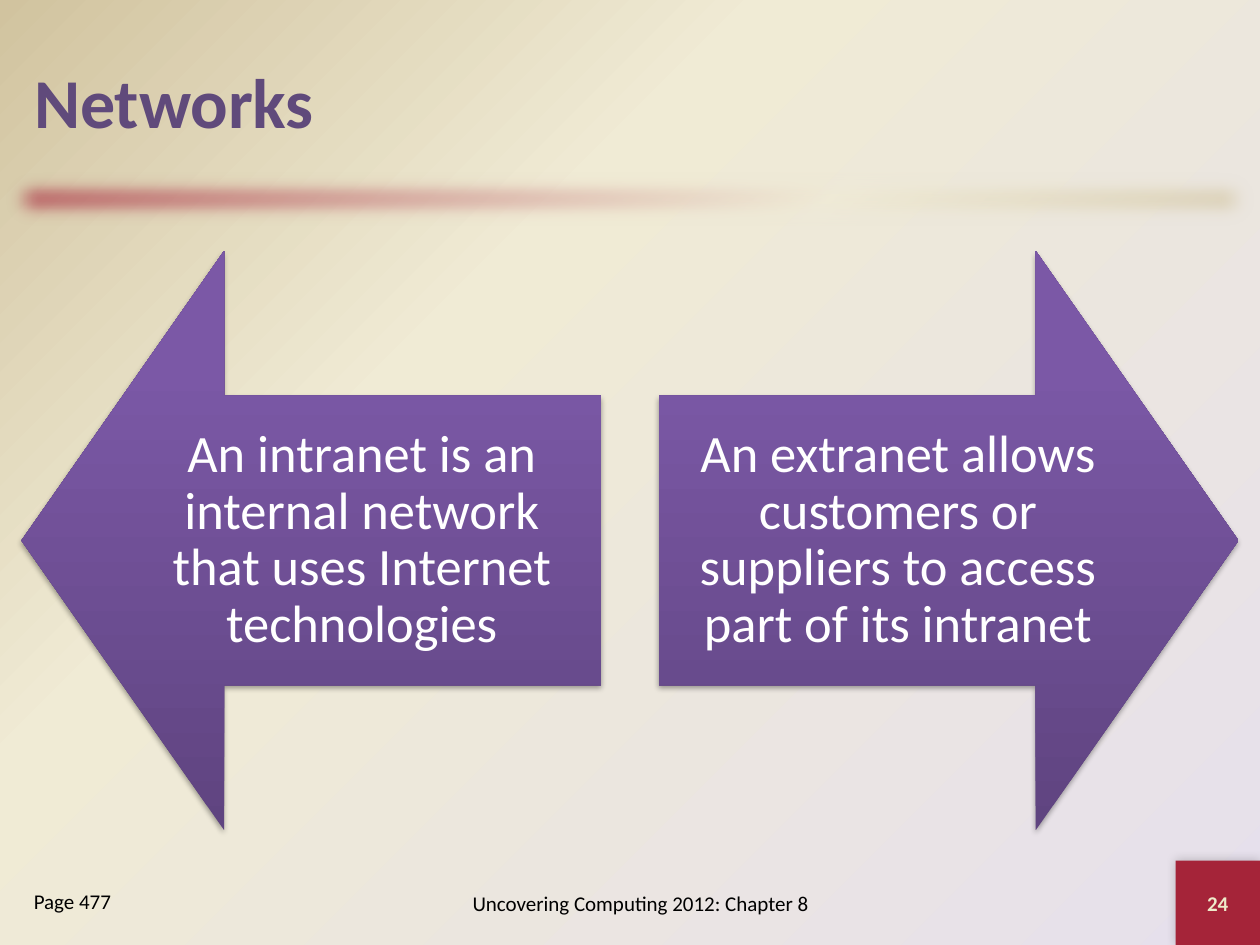
from lxml import etree
from pptx import Presentation
from pptx.dml.color import RGBColor
from pptx.enum.shapes import MSO_SHAPE
from pptx.enum.text import MSO_ANCHOR, PP_ALIGN
from pptx.oxml.ns import qn
from pptx.util import Inches, Pt

LEFT, CENTER = PP_ALIGN.LEFT, PP_ALIGN.CENTER
TOP, MIDDLE = MSO_ANCHOR.TOP, MSO_ANCHOR.MIDDLE
RECT = MSO_SHAPE.RECTANGLE
ARROWS = MSO_SHAPE.LEFT_ARROW, MSO_SHAPE.RIGHT_ARROW

COLORS = {
    "red": "A52439", "cream": "F0EBD5", "sand": "D1C39F", "mist": "E6E0EC",
    "title": "604A7B", "deep": "5F4480", "mid": "7B58A6", "light": "7C57A8",
    "white": "FFFFFF", "black": "000000", "number": "EEEBCA",
}


def add(parent, tag, **attrs):
    node = etree.SubElement(parent, qn("a:" + tag))
    for key, value in attrs.items():
        node.set(key, str(value))
    return node


class Deck:
    font = "Calibri"

    def __init__(self, width, height):
        self.prs = Presentation()
        self.prs.slide_width = Inches(width)
        self.prs.slide_height = Inches(height)
        self.slide = self.prs.slides.add_slide(self.prs.slide_layouts[5])

    def blend(self, fill, root, stops, angle=None):
        fill.gradient()
        grad = next(root.iter(qn("a:gradFill")))
        for child in list(grad):
            grad.remove(child)
        grad.set("rotWithShape", "1")
        row = add(grad, "gsLst")
        for pos, name in stops:
            stop = add(row, "gs", pos=pos * 1000)
            add(stop, "srgbClr", val=COLORS[name])
        if angle is None:
            focus = add(grad, "path", path="circle")
            add(focus, "fillToRect", l=100000, t=100000)
        else:
            add(grad, "lin", ang=angle * 60000, scaled=0)

    def backdrop(self, stops):
        self.blend(self.slide.background.fill, self.slide.element, stops)

    def shape(self, kind, box, color=None, stops=None, angle=0):
        shape = self.slide.shapes.add_shape(kind, *map(Inches, box))
        shape.line.fill.background()
        shape.shadow.inherit = False
        if stops:
            self.blend(shape.fill, shape.element, stops, angle)
        else:
            shape.fill.solid()
            shape.fill.fore_color.rgb = RGBColor.from_string(COLORS[color])
        return shape

    def effect(self, shape):
        return shape.element.spPr.find(qn("a:effectLst"))

    def soften(self, shape, radius):
        add(self.effect(shape), "softEdge", rad=Pt(radius))

    def shade(self, shape, alpha, blur, dist, angle):
        shadow = add(self.effect(shape), "outerShdw", blurRad=Pt(blur),
                     dist=Pt(dist), dir=angle * 60000, rotWithShape=0)
        tint = add(shadow, "srgbClr", val=COLORS["black"])
        add(tint, "alpha", val=alpha * 1000)

    def words(self, shape, text, size, color, bold=False, align=CENTER,
              anchor=MIDDLE):
        frame = shape.text_frame
        frame.word_wrap = True
        frame.vertical_anchor = anchor
        frame.text = text
        para = frame.paragraphs[0]
        para.alignment = align
        para.font.name = self.font
        para.font.size = Pt(size)
        para.font.bold = bold
        para.font.color.rgb = RGBColor.from_string(COLORS[color])
        return para

    def title(self, text, box):
        holder = self.slide.shapes.title
        holder.left, holder.top, holder.width, holder.height = map(Inches, box)
        self.words(holder, text, 40, "title", bold=True, align=LEFT)

    def label(self, text, box, **style):
        shape = self.slide.shapes.add_textbox(*map(Inches, box))
        return self.words(shape, text, 12, "black", **style)

    def arrow(self, kind, text, box):
        stops = [(0, "deep"), (80, "mid"), (100, "light")]
        shape = self.shape(kind, box, stops=stops, angle=270)
        shape.adjustments[0] = 0.5
        shape.adjustments[1] = 0.35
        self.shade(shape, 35, 3.1, 1.8, 90)
        para = self.words(shape, text, 30, "white")
        para.line_spacing = 0.9
        para.space_after = Pt(10.5)
        frame = shape.text_frame
        frame.margin_left = frame.margin_right = Inches(0.23)
        frame.margin_top = frame.margin_bottom = Inches(0.23)


def main():
    deck = Deck(10, 7.5)
    deck.backdrop([(0, "mist"), (65, "cream"), (100, "sand")])

    bar = deck.shape(RECT, (0, 1.33, 10, 0.5), angle=45,
                     stops=[(0, "red"), (65, "cream"), (100, "sand")])
    deck.soften(bar, 12.5)
    deck.title("Networks", (0.17, 0.17, 9.67, 1.25))

    side, edge = 4.6, 0.17
    texts = (
        "An intranet is an internal network that uses Internet technologies",
        "An extranet allows customers or suppliers to access part of its intranet",
    )
    for kind, text, left in zip(ARROWS, texts, (edge, 10 - edge - side)):
        deck.arrow(kind, text, (left, 1.99, side, side))

    deck.label("Uncovering Computing 2012: Chapter 8", (3, 6.92, 4.17, 0.5))
    square = deck.shape(RECT, (9.33, 6.83, 0.67, 0.67), "red")
    deck.shade(square, 20, 6, 0, 225)
    deck.words(square, "24", 12, "number", bold=True)
    page = deck.label("Page 477", (edge, 7, 1.83, 0.5), align=LEFT, anchor=TOP)
    page.space_before = Pt(2.4)

    deck.prs.save("out.pptx")


if __name__ == "__main__":
    main()
